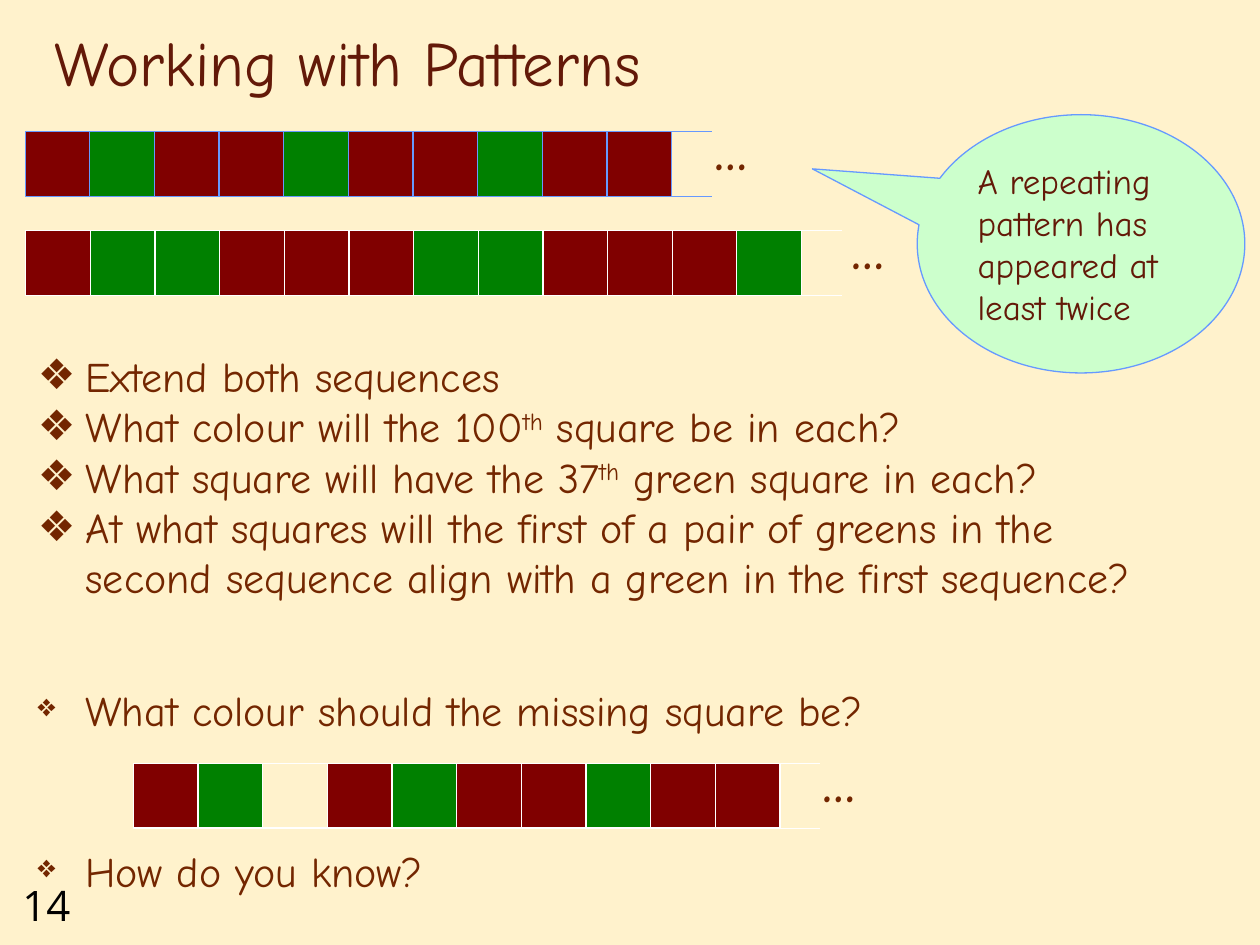
from lxml.etree import SubElement
from pptx import Presentation
from pptx.dml.color import RGBColor
from pptx.enum.shapes import MSO_CONNECTOR, MSO_SHAPE
from pptx.enum.text import MSO_ANCHOR, MSO_AUTO_SIZE, PP_ALIGN
from pptx.oxml.ns import qn
from pptx.util import Inches, Pt

FONT = "Comic Neue"
BROWN, DARK_BROWN = "732600", "631908"
BLUE, WHITE = "6699FF", "FFFFFF"
SQUARE_COLOURS = {"R": "800000", "G": "008000"}
COLUMN = ROW = Inches(0.1)
SQUARE = 5.13
STUB = 3.2


def colour(hex_string):
    """Return the colour for a hex string."""
    return RGBColor.from_string(hex_string)


def place(left, top, width, height):
    """Turn grid columns and rows into slide lengths."""
    return [round(left * COLUMN), round(top * ROW),
            round(width * COLUMN), round(height * ROW)]


def move(shape, box):
    """Move a placeholder into a grid box."""
    shape.left, shape.top, shape.width, shape.height = place(*box)


def style(paragraph, size, hex_string, font=FONT, bold=False):
    """Format a left-aligned paragraph and all its runs."""
    paragraph.alignment = PP_ALIGN.LEFT
    paragraph.space_before = Pt(0)
    for run in paragraph.runs:
        run.font.size = Pt(size)
        run.font.name = font
        run.font.bold = bold
        run.font.color.rgb = colour(hex_string)


def outline(shape, hex_string):
    """Give a shape or connector a thin line."""
    shape.line.color.rgb = colour(hex_string)
    shape.line.width = Pt(0.75)


def fill_shape(shape, hex_string):
    """Fill a shape, or leave it open, without a shadow."""
    shape.shadow.inherit = False
    if hex_string:
        shape.fill.solid()
        shape.fill.fore_color.rgb = colour(hex_string)
    else:
        shape.fill.background()


def add_text(shapes, box, text, size, hex_string, font=FONT, bold=False, wrap=True):
    """Add a one-paragraph text box."""
    text_frame = shapes.add_textbox(*place(*box)).text_frame
    text_frame.word_wrap = wrap
    text_frame.text = text
    style(text_frame.paragraphs[0], size, hex_string, font, bold)
    return text_frame


def add_bullet(paragraph, percent):
    """Give a paragraph a diamond bullet with a hanging indent."""
    properties = paragraph._p.get_or_add_pPr()
    properties.set("marL", str(Inches(0.38)))
    properties.set("indent", str(-Inches(0.38)))
    bullet_colour = SubElement(properties, qn("a:buClr"))
    SubElement(bullet_colour, qn("a:srgbClr")).set("val", BROWN)
    SubElement(properties, qn("a:buSzPct")).set("val", str(percent * 1000))
    SubElement(properties, qn("a:buChar")).set("char", "❖")


def add_title(slide, box, text):
    """Fill the title placeholder."""
    title = slide.shapes.title
    move(title, box)
    text_frame = title.text_frame
    text_frame.text = text
    text_frame.auto_size = MSO_AUTO_SIZE.NONE
    text_frame.vertical_anchor = MSO_ANCHOR.BOTTOM
    style(text_frame.paragraphs[0], 36, DARK_BROWN)


def add_questions(slide, box, questions):
    """Fill the body placeholder, raising text between carets."""
    body = slide.placeholders[1]
    move(body, box)
    text_frame = body.text_frame
    text_frame.auto_size = MSO_AUTO_SIZE.NONE
    for index, question in enumerate(questions):
        paragraph = text_frame.add_paragraph() if index else text_frame.paragraphs[0]
        for part, words in enumerate(question.split("^")):
            run = paragraph.add_run()
            run.text = words
            if part % 2:
                run.font._element.set("baseline", "30000")
        style(paragraph, 24, BROWN)
        add_bullet(paragraph, 100)


def add_side_question(slide, box, text):
    """Add a single question with a small bullet."""
    text_frame = add_text(slide.shapes, box, text, 24, BROWN)
    add_bullet(text_frame.paragraphs[0], 75)


def add_sequence(slide, left, top, pattern, line_colour, dots_gap):
    """Add a row of squares that trails off into dots."""
    shapes = slide.shapes.add_group_shape().shapes
    for index, letter in enumerate(pattern):
        box = place(left + index * SQUARE, top, SQUARE, SQUARE)
        square = shapes.add_shape(MSO_SHAPE.RECTANGLE, *box)
        fill_shape(square, SQUARE_COLOURS.get(letter))
        outline(square, line_colour)
    end = left + len(pattern) * SQUARE
    for edge in (top, top + SQUARE):
        connector = shapes.add_connector(
            MSO_CONNECTOR.STRAIGHT, *place(end, edge, end + STUB, edge))
        outline(connector, line_colour)
        SubElement(connector._element.spPr, qn("a:effectLst"))
    add_text(shapes, (end + dots_gap, top - 1.3, 5.2, 5.7), "…", 28, BROWN,
             bold=True, wrap=False)


def add_callout(slide, box, text):
    """Add the oval speech bubble."""
    callout = slide.shapes.add_shape(MSO_SHAPE.OVAL_CALLOUT, *place(*box))
    callout.adjustments[0], callout.adjustments[1] = -0.82, -0.29
    fill_shape(callout, "CCFFCC")
    outline(callout, BLUE)
    text_frame = callout.text_frame
    text_frame.text = text
    text_frame.word_wrap = True
    text_frame.vertical_anchor = MSO_ANCHOR.MIDDLE
    style(text_frame.paragraphs[0], 20, DARK_BROWN)


def main():
    """Build and save the slide."""
    presentation = Presentation()
    presentation.slide_width, presentation.slide_height = 100 * COLUMN, 75 * ROW
    slide = presentation.slides.add_slide(presentation.slide_layouts[1])
    slide.background.fill.solid()
    slide.background.fill.fore_color.rgb = colour("FFF2CC")

    add_title(slide, (3.3, 1.7, 85, 6.7), "Working with Patterns")
    add_sequence(slide, 2, 10.45, "RGRRGRRGRR", BLUE, 2.4)
    add_sequence(slide, 2.05, 18.3, "RGGRRRGGRRRG", WHITE, 3)
    add_callout(slide, (72.8, 9.1, 26, 20.5),
                "A repeating pattern has appeared at least twice")
    add_questions(slide, (2, 27.3, 93.7, 21.2), [
        "Extend both sequences",
        "What colour will the 100^th^ square be in each?",
        "What square will have the 37^th^ green square in each?",
        "At what squares will the first of a pair of greens in the second "
        "sequence align with a green in the first sequence?",
    ])
    add_side_question(slide, (2, 53.8, 88.2, 5.5),
                      "What colour should the missing square be?")
    add_sequence(slide, 10.6, 60.6, "RG RGRRGRR", WHITE, 2.4)
    add_side_question(slide, (2, 66.6, 44.1, 5.5), "How do you know?")
    add_text(slide.shapes, (0.8, 69.3, 7.5, 5), "14", 24, "000000", "Open Sans")
    presentation.save("out.pptx")


if __name__ == "__main__":
    main()
